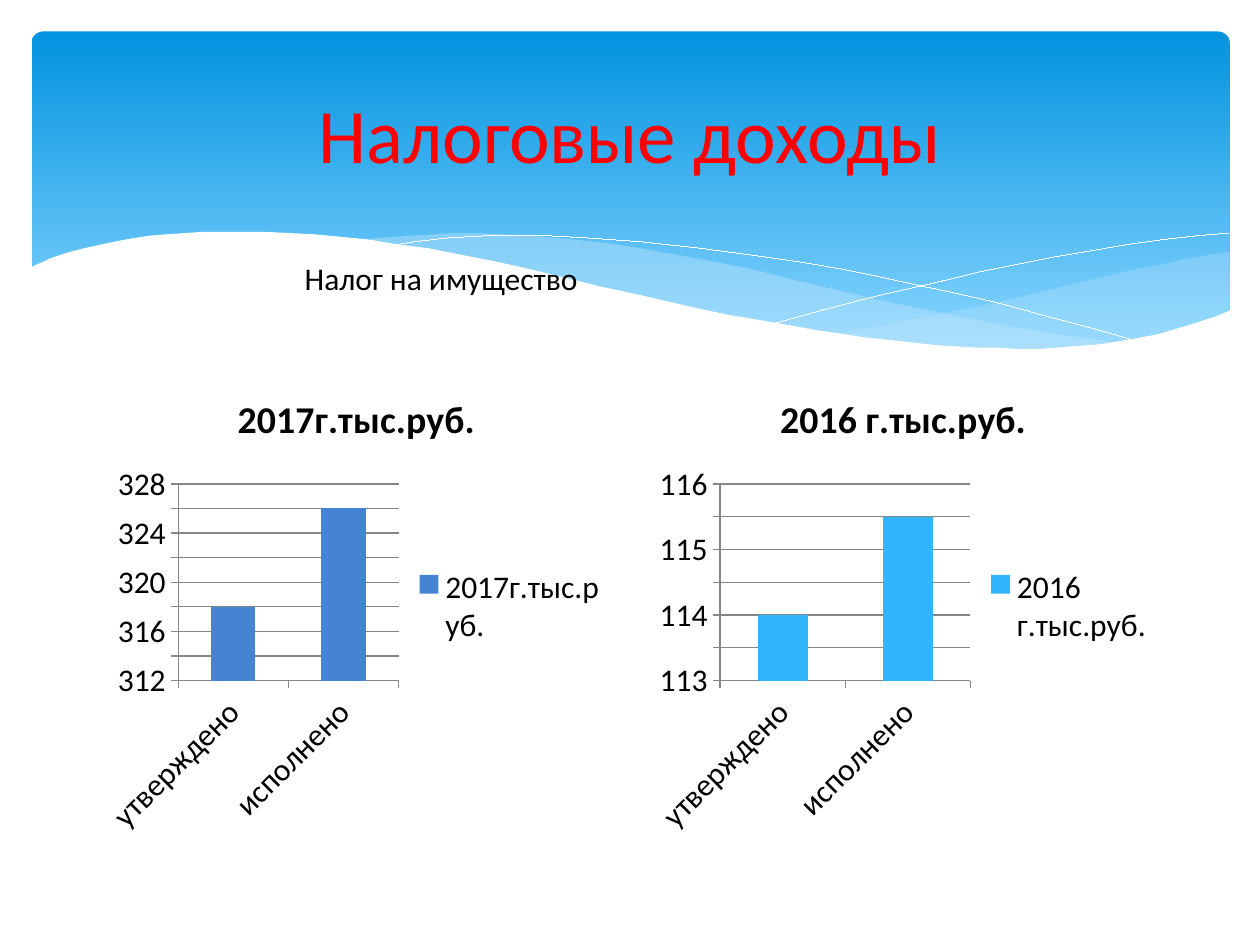
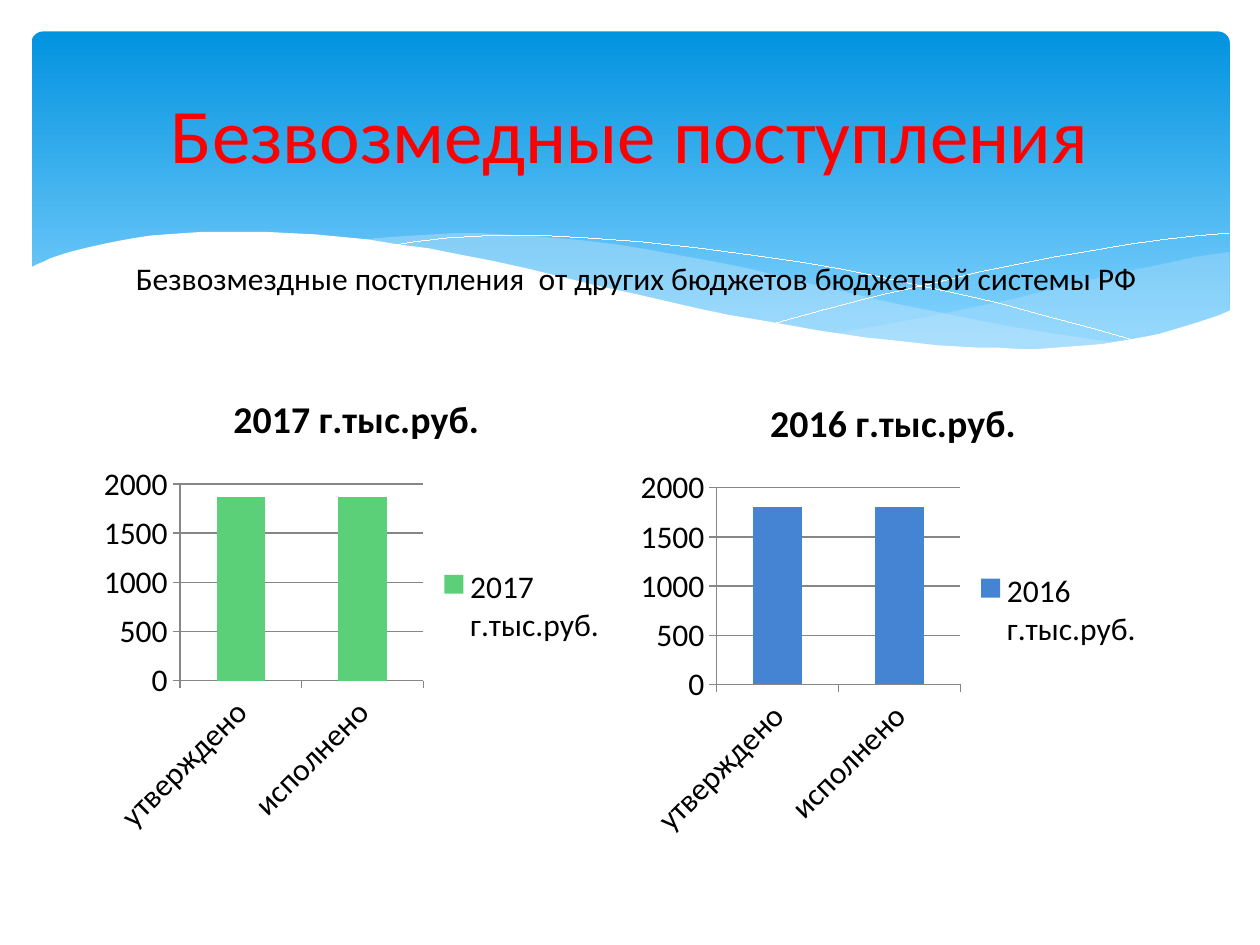
from lxml import etree
from pptx import Presentation
from pptx import util as u
from pptx.chart.data import CategoryChartData
from pptx.dml.color import RGBColor
from pptx.enum import chart as ch, shapes, text
from pptx.oxml import ns

FONT = "Calibri"
RED, BLACK, WHITE, GRAY = "FF0000", "000000", "FFFFFF", "868686"
BAND_TOP, BAND_BOTTOM, HAZE = "0293E0", "83D3FE", "C6E7FC"
BLUE, SKY, GREEN = "4584D3", "31B6FD", "5BD078"
HAIRLINE = u.Emu(1)
STACKED = ch.XL_CHART_TYPE.COLUMN_STACKED
CLUSTERED = ch.XL_CHART_TYPE.COLUMN_CLUSTERED
CATEGORIES = ["утверждено", "исполнено"]

BAND_BOX = (0.25, 0.25, 9.51, 2.7)
TITLE_BOX = (0.5, 0.37, 9, 1.37)
LEFT_CHART = (0.74, 2.93, 4.18, 3.77)

RIGHT_HAZE = [
    (975, 200), (948, 204), (921, 210), (891, 216), (861, 223), (805, 237),
    (753, 248), (706, 257), (661, 265), (691, 269), (719, 272), (745, 275),
    (769, 277), (803, 278), (835, 277), (863, 275), (889, 272), (913, 267),
    (935, 262), (949, 257), (963, 252), (976, 247), (976, 200)]
MIDDLE_HAZE = [
    (893, 273), (866, 269), (837, 265), (807, 260), (775, 254), (741, 247),
    (706, 240), (668, 231), (629, 222), (598, 214), (569, 208), (541, 203),
    (514, 198), (489, 194), (465, 191), (442, 189), (420, 187), (399, 186),
    (380, 185), (361, 185), (344, 186), (328, 187), (313, 188), (299, 189),
    (286, 191), (323, 196), (362, 203), (404, 211), (449, 222), (491, 232),
    (530, 240), (566, 248), (601, 255), (634, 261), (665, 266), (695, 270),
    (722, 274), (748, 276), (785, 278), (838, 278), (867, 276)]
FALLING_LINE = [
    (309, 195), (328, 192), (353, 189), (387, 187), (433, 187), (469, 189),
    (510, 192), (556, 197), (608, 204), (636, 208), (665, 213), (695, 219),
    (727, 226), (760, 233), (795, 241), (831, 251), (869, 261), (907, 272)]
RISING_LINE = [
    (613, 257), (653, 246), (695, 235), (748, 223), (776, 216), (806, 210),
    (836, 204), (866, 199), (895, 194), (924, 190), (951, 187), (975, 185)]
WHITE_WAVE = [
    (977, 246), (968, 250), (959, 253), (950, 256), (940, 259), (930, 262),
    (920, 265), (910, 267), (899, 269), (887, 271), (875, 273), (863, 274),
    (850, 275), (837, 276), (823, 277), (809, 277), (793, 276), (778, 276),
    (761, 275), (744, 274), (726, 272), (708, 270), (688, 268), (668, 265),
    (648, 262), (626, 258), (603, 254), (579, 250), (555, 245), (529, 239),
    (503, 233), (475, 227), (447, 220), (418, 213), (391, 207), (365, 202),
    (340, 197), (316, 194), (292, 190), (271, 188), (250, 186), (230, 185),
    (211, 184), (193, 184), (177, 184), (161, 184), (146, 185), (132, 186),
    (119, 187), (106, 189), (95, 191), (85, 193), (76, 195), (67, 197),
    (59, 199), (52, 201), (46, 203), (40, 205), (36, 207), (29, 210),
    (25, 212), (23, 213), (23, 329), (977, 329)]


def rgb(color):
    return RGBColor.from_string(color)


def inches(box):
    return [u.Inches(length) for length in box]


def style_runs(frame, size, color):
    for paragraph in frame.paragraphs:
        for run in paragraph.runs:
            run.font.name = FONT
            run.font.size = u.Pt(size)
            run.font.color.rgb = rgb(color)


def add_outline(slide, points, fill=None, opacity=100):
    builder = slide.shapes.build_freeform(*points[0], scale=u.Inches(0.01))
    builder.add_line_segments(points[1:], close=fill is not None)
    outline = builder.convert_to_shape()
    outline.shadow.inherit = False
    if fill is None:
        outline.fill.background()
        outline.line.color.rgb = rgb(WHITE)
        outline.line.width = HAIRLINE
        return
    outline.line.fill.background()
    outline.fill.solid()
    outline.fill.fore_color.rgb = rgb(fill)
    if opacity < 100:
        tint = outline.element.spPr.find(ns.qn("a:solidFill"))[0]
        etree.SubElement(tint, ns.qn("a:alpha"), val=str(opacity * 1000))


def add_band(slide, box):
    band = slide.shapes.add_shape(shapes.MSO_SHAPE.ROUNDED_RECTANGLE, *inches(box))
    band.adjustments[0] = 0.034
    band.shadow.inherit = False
    band.line.fill.background()
    band.fill.gradient()
    band.fill.gradient_angle = 270
    for stop, color, position in zip(
            band.fill.gradient_stops, (BAND_TOP, BAND_BOTTOM), (0, 0.9)):
        stop.color.rgb = rgb(color)
        stop.position = position
    add_outline(slide, RIGHT_HAZE, HAZE, 29)
    add_outline(slide, MIDDLE_HAZE, HAZE, 40)
    add_outline(slide, FALLING_LINE)
    add_outline(slide, RISING_LINE)
    add_outline(slide, WHITE_WAVE, WHITE)


def place_title(slide, wording, box):
    title = slide.shapes.title
    slide.shapes.element.append(title.element)
    title.left, title.top, title.width, title.height = inches(box)
    title.text_frame.text = wording
    title.text_frame.vertical_anchor = text.MSO_ANCHOR.MIDDLE
    title.text_frame.paragraphs[0].alignment = text.PP_ALIGN.CENTER
    style_runs(title.text_frame, 44, RED)


def add_subtitle(slide, wording, box, wrap):
    frame = slide.shapes.add_textbox(*inches(box)).text_frame
    frame.word_wrap = wrap
    frame.text = wording
    style_runs(frame, 18, BLACK)


def add_year_chart(slide, box, year, values, color, scale, kind=STACKED):
    data = CategoryChartData()
    data.categories = CATEGORIES
    data.add_series(year, values)
    chart = slide.shapes.add_chart(kind, *inches(box), data).chart
    chart.font.name = FONT
    chart.font.size = u.Pt(18)
    chart.font.color.rgb = rgb(BLACK)

    chart.has_title = True
    heading = chart.chart_title.text_frame
    heading.text = year
    style_runs(heading, 21.6, BLACK)
    heading.paragraphs[0].runs[0].font.bold = True
    chart.has_legend = True
    chart.legend.position = ch.XL_LEGEND_POSITION.RIGHT
    chart.legend.include_in_layout = False

    plot = chart.plots[0]
    plot.vary_by_categories = False
    plot.gap_width = 150
    if kind == STACKED:
        plot.overlap = 100
    bars = plot.series[0].format.fill
    bars.solid()
    bars.fore_color.rgb = rgb(color)

    amounts = chart.value_axis
    amounts.minimum_scale, amounts.maximum_scale, amounts.major_unit = scale
    amounts.has_major_gridlines = True
    for axis in (chart.category_axis, amounts):
        axis.major_tick_mark = ch.XL_TICK_MARK.OUTSIDE
        axis.minor_tick_mark = ch.XL_TICK_MARK.NONE
    for ruled in (chart.category_axis, amounts, amounts.major_gridlines):
        ruled.format.line.color.rgb = rgb(GRAY)
        ruled.format.line.width = u.Pt(0.72)


def add_income_slide(deck, title):
    slide = deck.slides.add_slide(deck.slide_layouts[5])
    add_band(slide, BAND_BOX)
    place_title(slide, title, TITLE_BOX)
    return slide


def main():
    deck = Presentation()
    deck.slide_width, deck.slide_height = u.Inches(10), u.Inches(7.5)

    taxes = add_income_slide(deck, "Налоговые доходы")
    add_year_chart(taxes, LEFT_CHART, "2017г.тыс.руб.", (318, 326),
                   BLUE, (312, 328, 2))
    add_year_chart(taxes, (5.08, 2.93, 4.18, 3.77), "2016 г.тыс.руб.",
                   (114, 115.5), SKY, (113, 116, 0.5))
    add_subtitle(taxes, "Налог на имущество", (2.32, 2.01, 2.46, 0.4), False)

    grants = add_income_slide(deck, "Безвозмедные поступления")
    add_year_chart(grants, LEFT_CHART, "2017 г.тыс.руб.", (1870, 1870),
                   GREEN, (0, 2000, 500), CLUSTERED)
    add_year_chart(grants, (5, 2.96, 4.18, 3.77), "2016 г.тыс.руб.",
                   (1800, 1800), BLUE, (0, 2000, 500))
    add_subtitle(
        grants,
        "Безвозмездные поступления  от других бюджетов бюджетной системы РФ",
        (0.98, 2.01, 9.26, 0.4), True)

    deck.save("out.pptx")


if __name__ == "__main__":
    main()
